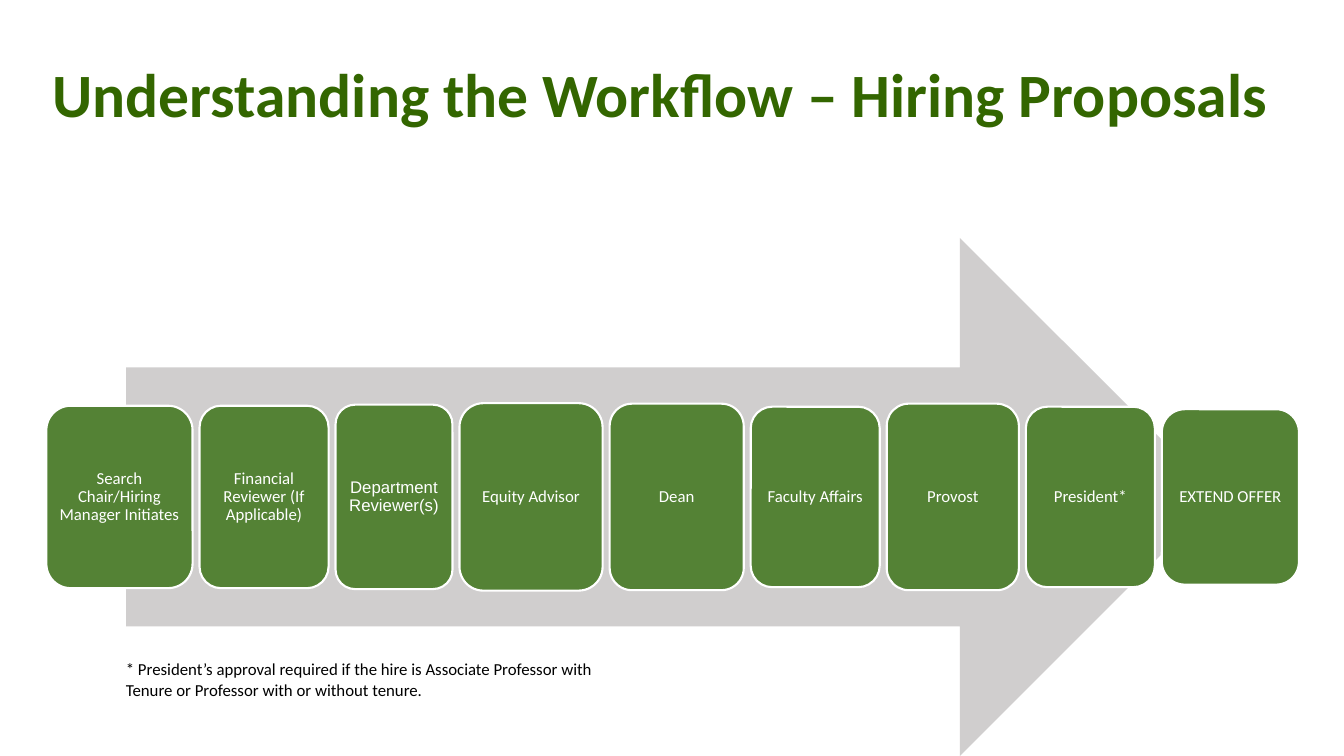
from pptx import Presentation
from pptx.dml.color import RGBColor
from pptx.enum.shapes import MSO_SHAPE
from pptx.enum.text import MSO_ANCHOR, MSO_AUTO_SIZE, PP_ALIGN
from pptx.util import Inches, Pt

WIDTH, HEIGHT = Inches(13.33), Inches(7.5)
COLORS = {"title": "336600", "arrow": "D0CECE", "step": "548235",
          "white": "FFFFFF", "black": "000000"}
ARROW = (9.38, 31.47, 81.32, 68.53)
STEP_LEFT, STEP_GAP = 3.45, 0.52
STEPS = [
    ("Search Chair/Hiring Manager Initiates", 10.88, 24.13, "Calibri"),
    ("Financial Reviewer (If Applicable)", 9.6, 24.13, "Calibri"),
    ("Department Reviewer(s)", 8.7, 24.4, "Arial"),
    ("Equity Advisor", 10.65, 24.8, "Calibri"),
    ("Dean", 9.98, 24.67, "Calibri"),
    ("Faculty Affairs", 9.6, 23.87, "Calibri"),
    ("Provost", 9.83, 24.67, "Calibri"),
    ("President*", 9.6, 23.87, "Calibri"),
    ("EXTEND OFFER", 10.2, 23.2, "Calibri"),
]
NOTE = ("* President’s approval required if the hire is Associate Professor "
        "with Tenure or Professor with or without tenure.")


def color(name):
    """Return a palette colour."""
    return RGBColor.from_string(COLORS[name])


def area(left, top, width, height):
    """Turn percentages of the slide into a box in EMU."""
    return (int(WIDTH * left / 100), int(HEIGHT * top / 100),
            int(WIDTH * width / 100), int(HEIGHT * height / 100))


def write(sp, text, size=12, font="Calibri", fill="white", bold=False,
          align=PP_ALIGN.LEFT, anchor=MSO_ANCHOR.MIDDLE, spacing=0.9, inset=None):
    """Put one formatted paragraph in a shape and return it."""
    tf = sp.text_frame
    tf.word_wrap = True
    tf.auto_size = MSO_AUTO_SIZE.NONE
    tf.vertical_anchor = anchor
    if inset is not None:
        tf.margin_left = tf.margin_right = tf.margin_top = tf.margin_bottom = Inches(inset)
    p = tf.paragraphs[0]
    p.alignment, p.line_spacing = align, spacing
    r = p.add_run()
    r.text = text
    r.font.size, r.font.name, r.font.bold = Pt(size), font, bold
    r.font.color.rgb = color(fill)
    return p


def add_block(s, kind, box, fill, outline=None):
    """Add a flat filled preset shape with an optional outline."""
    sp = s.shapes.add_shape(kind, *area(*box))
    sp.shadow.inherit = False
    sp.fill.solid()
    sp.fill.fore_color.rgb = color(fill)
    if outline:
        sp.line.color.rgb = color(outline)
        sp.line.width = Pt(1.5)
    else:
        sp.line.fill.background()
    return sp


def add_title(s, text):
    """Place and fill the title placeholder."""
    sp = s.shapes.title
    sp.left, sp.top, sp.width, sp.height = area(3.15, 3.2, 92.2, 19.33)
    write(sp, text, size=44, fill="title", bold=True)


def add_steps(s):
    """Lay the approval steps side by side along the arrow's axis."""
    left, middle = STEP_LEFT, ARROW[1] + ARROW[3] / 2
    for text, width, height, font in STEPS:
        sp = add_block(s, MSO_SHAPE.ROUNDED_RECTANGLE,
                       (left, middle - height / 2, width, height), "step", "white")
        write(sp, text, font=font, align=PP_ALIGN.CENTER, inset=0.05)
        left += width + STEP_GAP


def add_note(s, text):
    """Add the indented footnote."""
    sp = s.shapes.add_textbox(*area(4.88, 86.53, 40.96, 6.67))
    p = write(sp, text, fill="black", anchor=MSO_ANCHOR.TOP, spacing=1.0)
    p.level = 1
    pPr = p._p.get_or_add_pPr()
    pPr.set("marL", str(Inches(0.5)))
    pPr.set("indent", "0")


def main():
    """Build the slide and save it."""
    prs = Presentation()
    prs.slide_width, prs.slide_height = WIDTH, HEIGHT
    s = prs.slides.add_slide(prs.slide_layouts[5])
    add_title(s, "Understanding the Workflow – Hiring Proposals")
    add_block(s, MSO_SHAPE.RIGHT_ARROW, ARROW, "arrow")
    add_steps(s)
    add_note(s, NOTE)
    prs.save("out.pptx")


if __name__ == "__main__":
    main()
